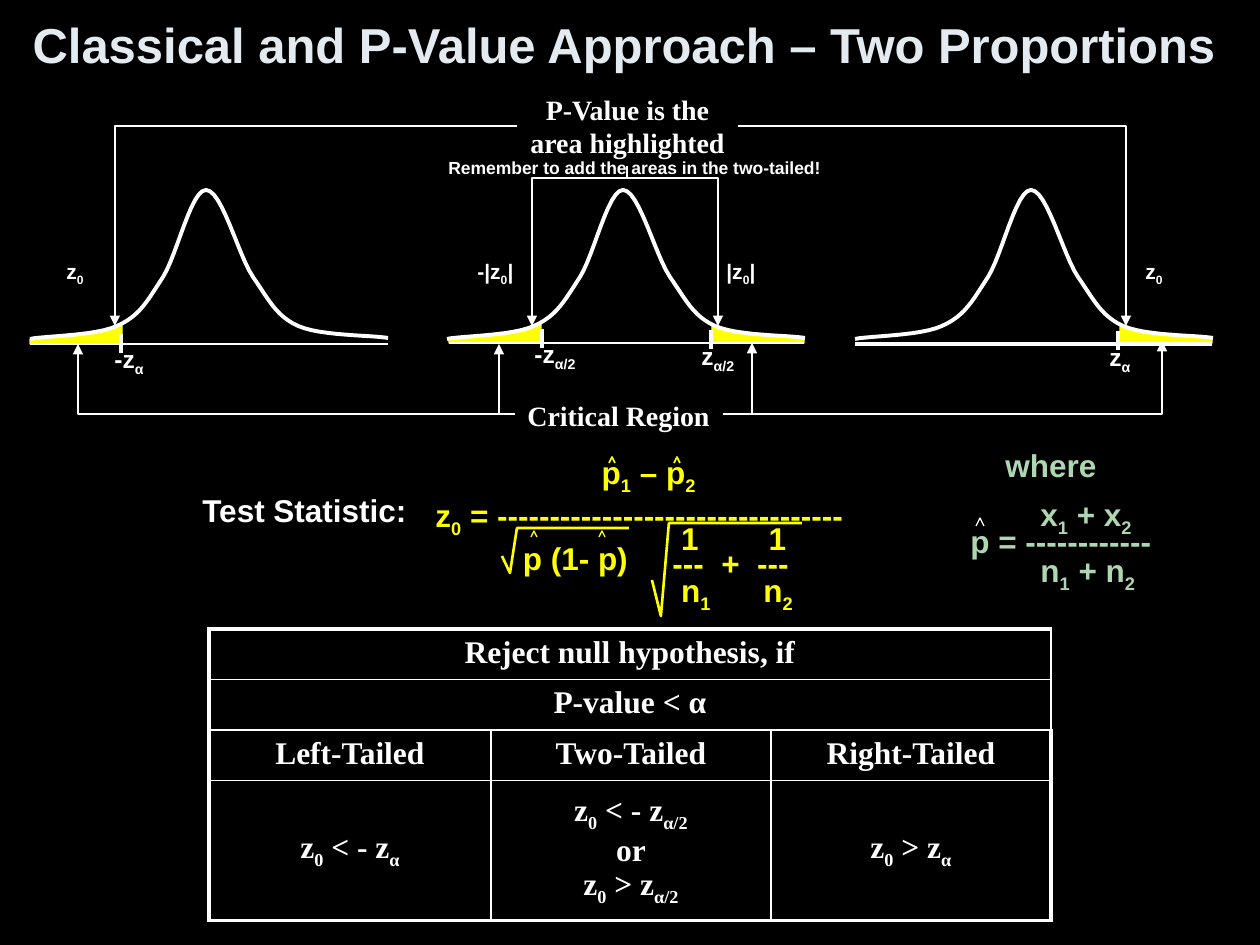
from lxml.etree import SubElement
from pptx import Presentation
from pptx.dml.color import RGBColor
from pptx.enum.shapes import MSO_CONNECTOR as CONNECTOR
from pptx.enum.text import MSO_ANCHOR as ANCHOR, PP_ALIGN as ALIGN
from pptx.oxml.ns import qn
from pptx.util import Pt

PX = 914400 / 126
COLORS = {name: RGBColor.from_string(value) for name, value in {
    "black": "000000", "white": "FFFFFF", "title": "E3EBF1",
    "yellow": "FFFF00", "green": "AFD6B2"}.items()}
SANS, SERIF = "Arial", "Times New Roman"


def emu(*lengths):
    return [round(length * PX) for length in lengths]


def write(frame, lines, size, color="white", font=SANS, align=ALIGN.LEFT,
          spacing=None, tabs=()):
    """Fill a text frame; text between ~ marks is subscript, tabs are in points per line."""
    for index, line in enumerate(lines):
        paragraph = frame.paragraphs[0] if index == 0 else frame.add_paragraph()
        paragraph.alignment = align
        if spacing:
            paragraph.line_spacing = spacing
        if tabs and tabs[index]:
            stops = SubElement(paragraph._p.get_or_add_pPr(), qn("a:tabLst"))
            for stop in tabs[index]:
                SubElement(stops, qn("a:tab"), pos=str(Pt(stop)), algn="l")
        paragraph.font.size, paragraph.font.bold = Pt(size), True
        paragraph.font.name = font
        paragraph.font.color.rgb = COLORS[color]
        for part, text in enumerate(line.split("~")):
            if text:
                run = paragraph.add_run()
                run.text = text
                if part % 2:
                    run.font._element.set("baseline", "-25000")


presentation = Presentation()
presentation.slide_width, presentation.slide_height = emu(1260, 945)
slide = presentation.slides.add_slide(presentation.slide_layouts[5])
slide.background.fill.solid()
slide.background.fill.fore_color.rgb = COLORS["black"]

title = slide.shapes.title
title.left, title.top, title.width, title.height = emu(20, 8, 1222, 72)
title.text_frame.word_wrap = False
write(title.text_frame, ["Classical and P-Value Approach – Two Proportions"], 28, "title")

# Outlines: points in px, fill, line colour, line width in points
outlines = []

# Shaded tails: outer end, direction towards the centre, top shift
TAIL = [(0, 338), (0, 343), (92, 343), (92, 324), (75, 330), (57, 334), (38, 336), (19, 337)]
for outer, direction, shift in [(30, 1, 1), (449, 1, 0), (804, -1, 0), (1212, -1, 0)]:
    points = [(outer + direction * x, y + shift) for x, y in TAIL]
    outlines.append((points + points[:1], "yellow", "yellow", 0.75))

# Bell curves: cubic segments that share their end points
BELL = [(0, 339), (14, 336), (65, 336), (87, 326), (110, 316), (118, 300), (133, 277),
        (147, 255), (161, 190), (176, 190), (192, 190), (208, 255), (223, 277),
        (239, 300), (246, 316), (268, 326), (291, 336), (339, 335), (358, 338)]
STEPS = 12
curve = [BELL[0]]
for first in range(0, len(BELL) - 1, 3):
    for step in range(1, STEPS + 1):
        t = step / STEPS
        weights = ((1 - t) ** 3, 3 * t * (1 - t) ** 2, 3 * t * t * (1 - t), t ** 3)
        curve.append(tuple(sum(weight * point[axis] for weight, point
                               in zip(weights, BELL[first:first + 4])) for axis in (0, 1)))
for left in (30, 447, 855):
    outlines.append(([(left + x, y) for x, y in curve], None, "white", 2.25))

# Roots and hats of the formulas
outlines.append(([(502, 556), (510, 573), (517, 528), (629, 528)], None, "yellow", 1.5))
outlines.append(([(652, 580), (661, 616), (669, 523), (802, 523)], None, "yellow", 1.5))
for x, y, half, height, color, weight in [
        (612, 457, 3, 6, "yellow", 1), (677, 457, 3, 6, "yellow", 1),
        (534, 531, 3, 6, "yellow", 0.75), (602, 531, 3, 6, "yellow", 0.75),
        (980, 518, 4, 8, "white", 0.75)]:
    outlines.append(([(x - half, y + height), (x, y), (x + half, y + height)],
                     None, color, weight))

for points, fill, color, weight in outlines:
    builder = slide.shapes.build_freeform(*emu(*points[0]))
    builder.add_line_segments([emu(*point) for point in points[1:]], close=fill is not None)
    shape = builder.convert_to_shape()
    shape.shadow.inherit = False
    if fill:
        shape.fill.solid()
        shape.fill.fore_color.rgb = COLORS[fill]
    else:
        shape.fill.background()
    shape.line.color.rgb = COLORS[color]
    shape.line.width = Pt(weight)

# Lines: from, to, weight, elbow with arrowhead
axes = [(30, 344, 388, 344, 1.5, False), (449, 343, 804, 343, 1.5, False),
        (855, 344, 1212, 344, 2.25, False)]
ticks = [(x, y, x, y + 19, 2.25, False)
         for x, y in [(121, 334), (542, 329), (711, 330), (1118, 331)]]
arrows = [(*ends, 0.75, True) for ends in [
    (515, 414, 78, 344), (515, 414, 499, 344), (723, 414, 752, 343), (723, 414, 1162, 341),
    (517, 126, 115, 326), (738, 126, 1126, 326), (627, 178, 532, 326), (627, 178, 718, 326)]]
stem = (627, 166, 627, 178, 0.75, False)
for *ends, weight, elbow in axes + ticks + arrows + [stem]:
    connector = slide.shapes.add_connector(
        CONNECTOR.ELBOW if elbow else CONNECTOR.STRAIGHT, *emu(*ends))
    connector.line.color.rgb = COLORS["white"]
    connector.line.width = Pt(weight)
    properties = connector._element.spPr
    if elbow:
        properties.find(qn("a:prstGeom")).set("prst", "bentConnector2")
        SubElement(connector.line._get_or_add_ln(), qn("a:tailEnd"), type="triangle")
    SubElement(properties, qn("a:effectLst"))

# Text boxes: left, top, width, height, lines, format
for *box, lines, style in [
        (190, 485, 232, 50, ["Test Statistic:"], {"size": 18}),
        (1097, 336, 47, 42, ["z~α~"], {"size": 14}),
        (522, 333, 68, 42, ["-z~α/2~"], {"size": 14}),
        (689, 335, 60, 42, ["z~α/2~"], {"size": 14}),
        (102, 338, 55, 42, ["-z~α~"], {"size": 14}),
        (714, 252, 55, 38, ["|z~0~|"], {"size": 12}),
        (465, 252, 63, 38, ["-|z~0~|"], {"size": 12}),
        (54, 252, 44, 38, ["z~0~"], {"size": 12}),
        (1133, 252, 44, 38, ["z~0~"], {"size": 12}),
        (515, 392, 208, 47, ["Critical Region"], {"size": 16, "font": SERIF}),
        (517, 86, 221, 81, ["P-Value is the", "area highlighted"],
         {"size": 16, "font": SERIF, "align": ALIGN.CENTER}),
        (436, 151, 398, 34, ["Remember to add the areas in the two-tailed!"], {"size": 10}),
        (958, 450, 208, 40, ["\twhere"],
         {"size": 18, "color": "green", "spacing": 0.7, "tabs": [[20]]}),
        (958, 496, 208, 94, ["\tx~1~ + x~2~", "p = ------------", "\tn~1~ + n~2~"],
         {"size": 18, "color": "green", "spacing": 0.7, "tabs": [[40], [], [40]]}),
        (423, 447, 435, 126,
         ["\tp~1~ – p~2~", "z~0~ = " + "-" * 33, "\tp (1- p)"],
         {"size": 18, "color": "yellow", "tabs": [[95], [], [50]]}),
        (660, 525, 150, 88, ["\t1\t1", "---\t+\t---", "\tn~1~\tn~2~"],
         {"size": 18, "color": "yellow", "spacing": 0.65,
          "tabs": [[5, 55], [28, 48.5], [5, 52]]})]:
    frame = slide.shapes.add_textbox(*emu(*box)).text_frame
    frame.word_wrap = "tabs" in style
    write(frame, lines, **style)

# Decision table
ROWS = [["Reject null hypothesis, if"], ["P-value < α"],
        ["Left-Tailed", "Two-Tailed", "Right-Tailed"],
        ["z~0~ < - z~α~", "z~0~ < - z~α/2~\nor\nz~0~ > z~α/2~", "z~0~ > z~α~"]]
table = slide.shapes.add_table(4, 3, *emu(209, 629, 842, 290)).table
for column, width in zip(table.columns, emu(282, 280, 280)):
    column.width = width
for row, height in zip(table.rows, emu(50, 50, 50, 140)):
    row.height = height
for r, texts in enumerate(ROWS):
    if len(texts) == 1:
        table.cell(r, 0).merge(table.cell(r, 2))
    for c in range(3):
        cell = table.cell(r, c)
        if c < len(texts):
            write(cell.text_frame, texts[c].split("\n"), 18, font=SERIF, align=ALIGN.CENTER)
        cell.vertical_anchor = ANCHOR.MIDDLE if r == 3 else ANCHOR.TOP
        outer_edges = {"lnL": c == 0, "lnR": c == 2, "lnT": r == 0, "lnB": r == 3}
        for tag, outer in outer_edges.items():
            border = SubElement(cell._tc.get_or_add_tcPr(), qn(f"a:{tag}"),
                                w=str(Pt(2.25 if outer else 1)))
            fill = SubElement(border, qn("a:solidFill"))
            SubElement(fill, qn("a:srgbClr"), val=str(COLORS["white"]))
        cell.fill.background()

presentation.save("out.pptx")
